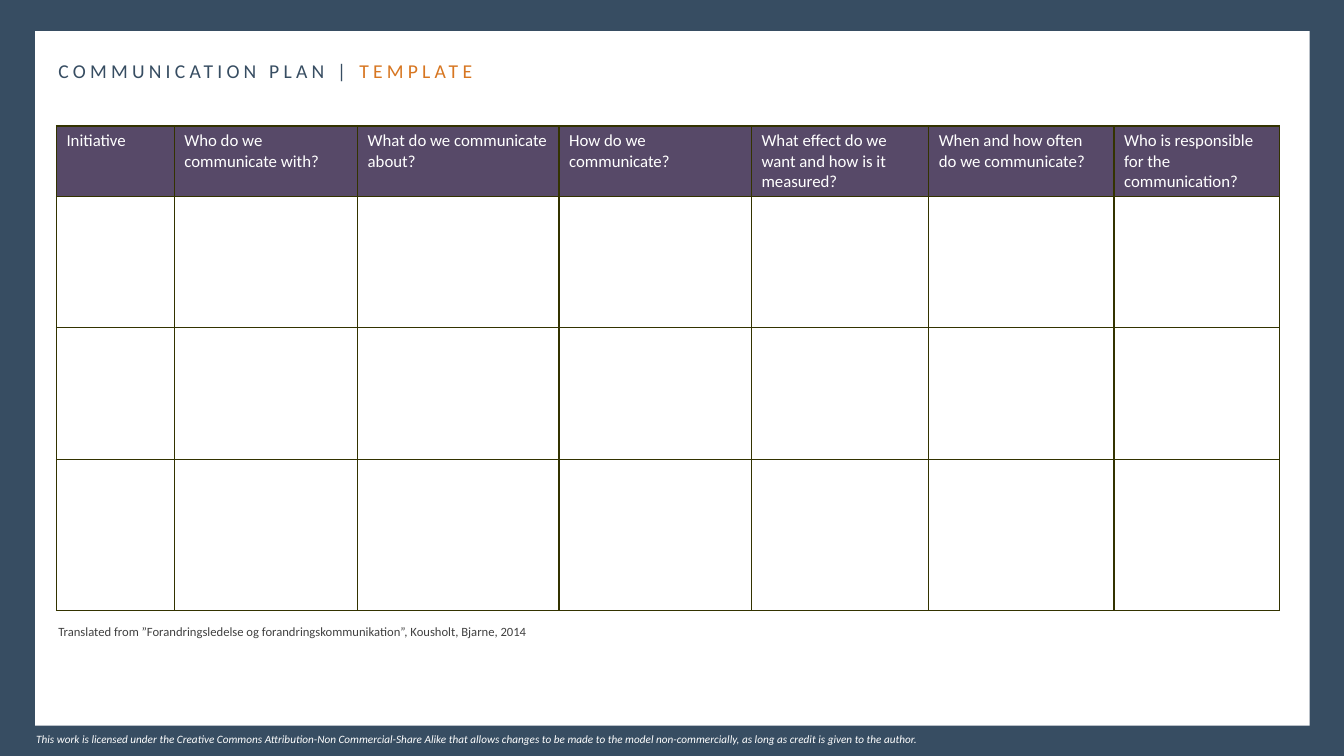
from pptx import Presentation
from pptx.util import Inches as In, Pt
from pptx.dml.color import RGBColor as RGB
from pptx.enum.shapes import MSO_SHAPE as Shape
from pptx.oxml.ns import qn
from lxml.etree import SubElement as Sub

HUES = {
    "navy": "374D62", "white": "FFFFFF", "plum": "574968",
    "olive": "333300", "gold": "D77621", "gray": "404040",
}
WIDE, HIGH = 13.33, 7.5
HEADS = [
    "Initiative",
    "Who do we communicate with?",
    "What do we communicate about?",
    "How do we communicate?",
    "What effect do we want and how is it measured?",
    "When and how often do we communicate?",
    "Who is responsible for the communication?",
]
COLS = [1.17, 1.82, 2, 1.91, 1.76, 1.84, 1.64]
ROWS = [0.69, 1.3, 1.31, 1.5]


def hue(name):
    return RGB.from_string(HUES[name])


def style(run, size, tint, slant=False, gap=0):
    font = run.font
    font.name, font.size = "Calibri", Pt(size)
    font.bold, font.italic = False, slant
    font.color.rgb = hue(tint)
    if gap:
        run._r.get_or_add_rPr().set("spc", str(gap * 100))


def label(slide, box, parts, size, **look):
    """Place one line of text made of (words, tint) parts."""
    frame = slide.shapes.add_textbox(*map(In, box)).text_frame
    frame.word_wrap = True
    for words, tint in parts:
        run = frame.paragraphs[0].add_run()
        run.text = words
        style(run, size, tint, **look)


def edge(cell):
    """Draw a thin line on all four sides of a cell."""
    props = cell._tc.get_or_add_tcPr()
    for side in "LRTB":
        line = Sub(props, qn("a:ln" + side), w=str(Pt(1)))
        fill = Sub(line, qn("a:solidFill"))
        Sub(fill, qn("a:srgbClr"), val=HUES["olive"])


def panel(slide, box):
    """White sheet on the dark background."""
    slide.background.fill.solid()
    slide.background.fill.fore_color.rgb = hue("navy")
    sheet = slide.shapes.add_shape(Shape.RECTANGLE, *map(In, box))
    sheet.shadow.inherit = False
    sheet.fill.solid()
    sheet.fill.fore_color.rgb = hue("white")
    sheet.line.fill.background()


def plan(slide, box):
    """Table with a header row and empty rows, scaled to the box."""
    left, top, wide, high = box
    table = slide.shapes.add_table(
        len(ROWS), len(COLS), In(left), In(top), In(wide), In(high)).table
    table.first_row = table.horz_banding = False
    for col, size in zip(table.columns, COLS):
        col.width = In(wide * size / sum(COLS))
    for row, size in zip(table.rows, ROWS):
        row.height = In(high * size / sum(ROWS))
    for cell in table.iter_cells():
        edge(cell)
        cell.fill.background()
    for cell, head in zip(table.rows[0].cells, HEADS):
        cell.fill.solid()
        cell.fill.fore_color.rgb = hue("plum")
        cell.text_frame.text = head
        style(cell.text_frame.paragraphs[0].runs[0], 12, "white")


def page(slide, wide, high):
    # Sheet and license line
    panel(slide, (0.35, 0.31, wide - 0.69, high - 0.61))
    label(slide, (0.26, high - 0.28, 11.3, 0.24), [(
        "This work is licensed under the Creative Commons "
        "Attribution-Non Commercial-Share Alike that allows changes to be "
        "made to the model non-commercially, as long as credit is given "
        "to the author.", "white")], 8, slant=True)
    # Table
    plan(slide, (0.56, 1.25, wide - 1.2, 4.8))
    # Title and credit
    label(slide, (0.48, 0.54, 6.32, 0.34),
          [("COMMUNICATION PLAN | ", "navy"), ("TEMPLATE", "gold")],
          14, gap=3)
    label(slide, (0.48, 6.14, 6.38, 0.25), [(
        "Translated from ”Forandringsledelse og "
        "forandringskommunikation”, Kousholt, Bjarne, 2014", "gray")], 9)


def main():
    deck = Presentation()
    deck.slide_width, deck.slide_height = In(WIDE), In(HIGH)
    page(deck.slides.add_slide(deck.slide_layouts[6]), WIDE, HIGH)
    deck.save("out.pptx")


if __name__ == "__main__":
    main()
